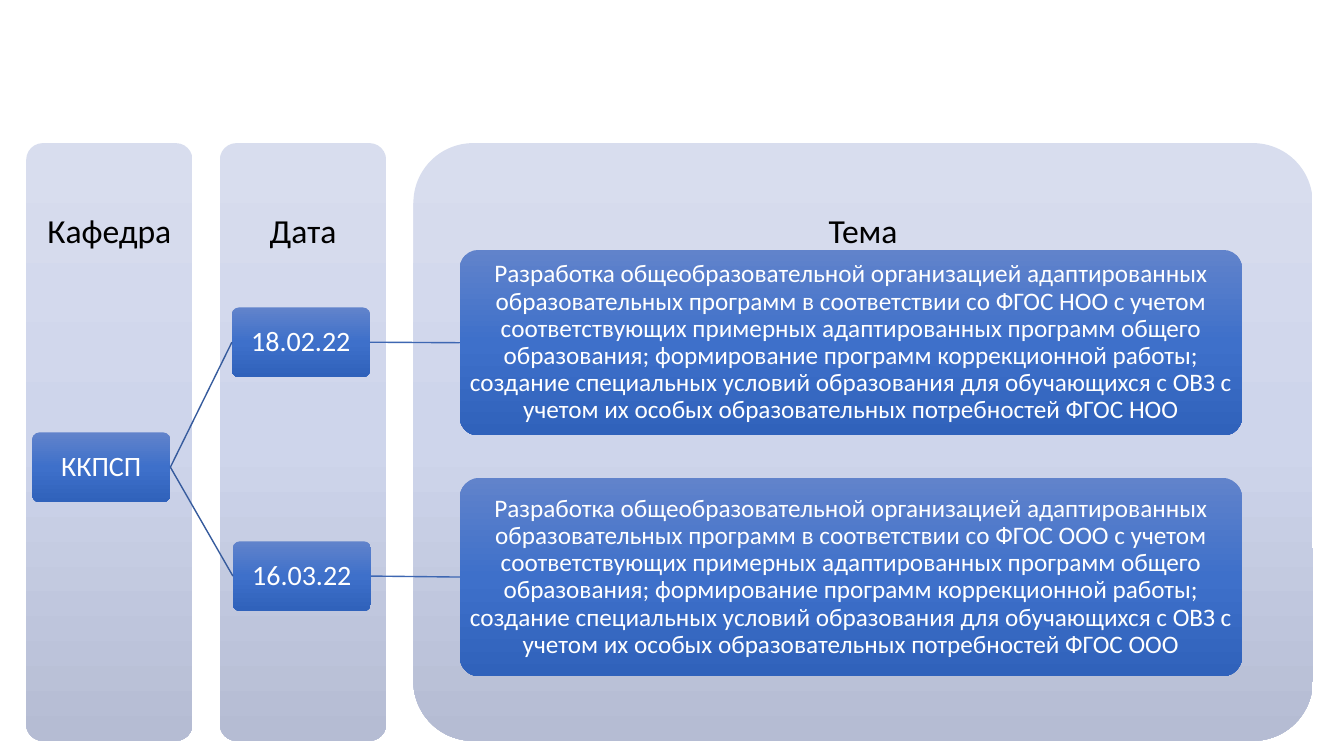
import copy

import pptx
import pptx.dml.color
import pptx.enum.dml
import pptx.enum.shapes
import pptx.enum.text
import pptx.oxml
import pptx.oxml.ns
import pptx.util

Inches, Pt = pptx.util.Inches, pptx.util.Pt
RGB = pptx.dml.color.RGBColor

# Content
TOPIC = (
    "Разработка общеобразовательной организацией адаптированных образовательных "
    "программ в соответствии со ФГОС {level} с учетом соответствующих примерных "
    "адаптированных программ общего образования; формирование программ "
    "коррекционной работы; создание специальных условий образования для обучающихся "
    "с ОВЗ с учетом их особых образовательных потребностей ФГОС {level}"
)
COLUMNS = [("Кафедра", 1.65), ("Дата", 1.65), ("Тема", 8.92)]  # heading, width
DEPARTMENT = "ККПСП"
# date, its left and top, level of education, top and height of the topic
SESSIONS = [
    ("18.02.22", 2.3, 3.05, "НОО", 2.48, 1.84),
    ("16.03.22", 2.31, 5.37, "ООО", 4.74, 1.97),
]

# Style
FONT = "Calibri"
BLACK, WHITE = RGB(0, 0, 0), RGB(255, 255, 255)
COLUMN_GRADIENT = [RGB(0xD8, 0xDD, 0xEE), RGB(0xCE, 0xD5, 0xEB), RGB(0xB5, 0xBC, 0xD3)]
BOX_GRADIENT = [RGB(0x61, 0x83, 0xCB), RGB(0x3E, 0x70, 0xCA), RGB(0x30, 0x62, 0xBB)]
DATE_LINE, TOPIC_LINE = RGB(0x36, 0x5B, 0x9D), RGB(0x3E, 0x67, 0xB2)

# Layout in inches
COLUMN_LEFT, COLUMN_TOP, COLUMN_HEIGHT, COLUMN_GAP = 0.26, 1.42, 5.93, 0.27
HEADING_HEIGHT, HEADING_INSET = 1.78, 0.19
SMALL_WIDTH, SMALL_HEIGHT = 1.37, 0.69
TOPIC_LEFT, TOPIC_WIDTH = 4.56, 7.76
BOX_INSET = 0.01
LEFT_SIDE, RIGHT_SIDE = 1, 3


def write(shape, text, size, color, inset):
    frame = shape.text_frame
    frame.text = text
    frame.word_wrap = True
    frame.vertical_anchor = pptx.enum.text.MSO_ANCHOR.MIDDLE
    frame.margin_left = frame.margin_right = Inches(inset)
    frame.margin_top = frame.margin_bottom = Inches(inset)
    paragraph = frame.paragraphs[0]
    paragraph.alignment = pptx.enum.text.PP_ALIGN.CENTER
    paragraph.line_spacing = 0.9
    font = paragraph.runs[0].font
    font.name, font.size, font.color.rgb = FONT, Pt(size), color


def add_panel(slide, left, top, width, height, gradient):
    panel = slide.shapes.add_shape(
        pptx.enum.shapes.MSO_SHAPE.ROUNDED_RECTANGLE,
        Inches(left), Inches(top), Inches(width), Inches(height))
    panel.adjustments[0] = 0.1
    panel.shadow.inherit = False
    panel.line.fill.background()
    panel.fill.gradient()
    panel.fill.gradient_angle = 270
    # The default gradient has two stops; a third goes in the middle
    first_stop = panel._element.spPr.find(".//" + pptx.oxml.ns.qn("a:gs"))
    first_stop.addnext(copy.deepcopy(first_stop))
    for index, (stop, color) in enumerate(zip(panel.fill.gradient_stops, gradient)):
        stop.position = index / 2
        stop.color.rgb = color
    return panel


def add_box(slide, text, left, top, width, height, size):
    box = add_panel(slide, left, top, width, height, BOX_GRADIENT)
    write(box, text, size, WHITE, BOX_INSET)
    return box


def join(slide, start, end, color):
    link = slide.shapes.add_connector(
        pptx.enum.shapes.MSO_CONNECTOR.STRAIGHT, 0, 0, 0, 0)
    link.begin_connect(start, RIGHT_SIDE)
    link.end_connect(end, LEFT_SIDE)
    link.line.color.rgb = color
    link.line.width = Pt(1)
    link._element.spPr.append(pptx.oxml.parse_xml(
        "<a:effectLst %s/>" % pptx.oxml.ns.nsdecls("a")))


def main():
    deck = pptx.Presentation()
    deck.slide_width, deck.slide_height = Inches(13.33), Inches(7.5)
    slide = deck.slides.add_slide(deck.slide_layouts[6])

    # Columns with their headings
    left = COLUMN_LEFT
    for name, width in COLUMNS:
        add_panel(slide, left, COLUMN_TOP, width, COLUMN_HEIGHT, COLUMN_GRADIENT)
        heading = slide.shapes.add_textbox(
            Inches(left), Inches(COLUMN_TOP), Inches(width), Inches(HEADING_HEIGHT))
        write(heading, name, 24, BLACK, HEADING_INSET)
        left += width + COLUMN_GAP

    # Department, dates and topics
    department = add_box(slide, DEPARTMENT, 0.32, 4.29, SMALL_WIDTH, SMALL_HEIGHT, 20)
    for day, day_left, day_top, level, topic_top, topic_height in SESSIONS:
        date = add_box(slide, day, day_left, day_top, SMALL_WIDTH, SMALL_HEIGHT, 20)
        topic = add_box(slide, TOPIC.format(level=level), TOPIC_LEFT, topic_top,
                        TOPIC_WIDTH, topic_height, 18)
        join(slide, department, date, DATE_LINE)
        join(slide, date, topic, TOPIC_LINE)

    deck.save("out.pptx")


if __name__ == "__main__":
    main()
